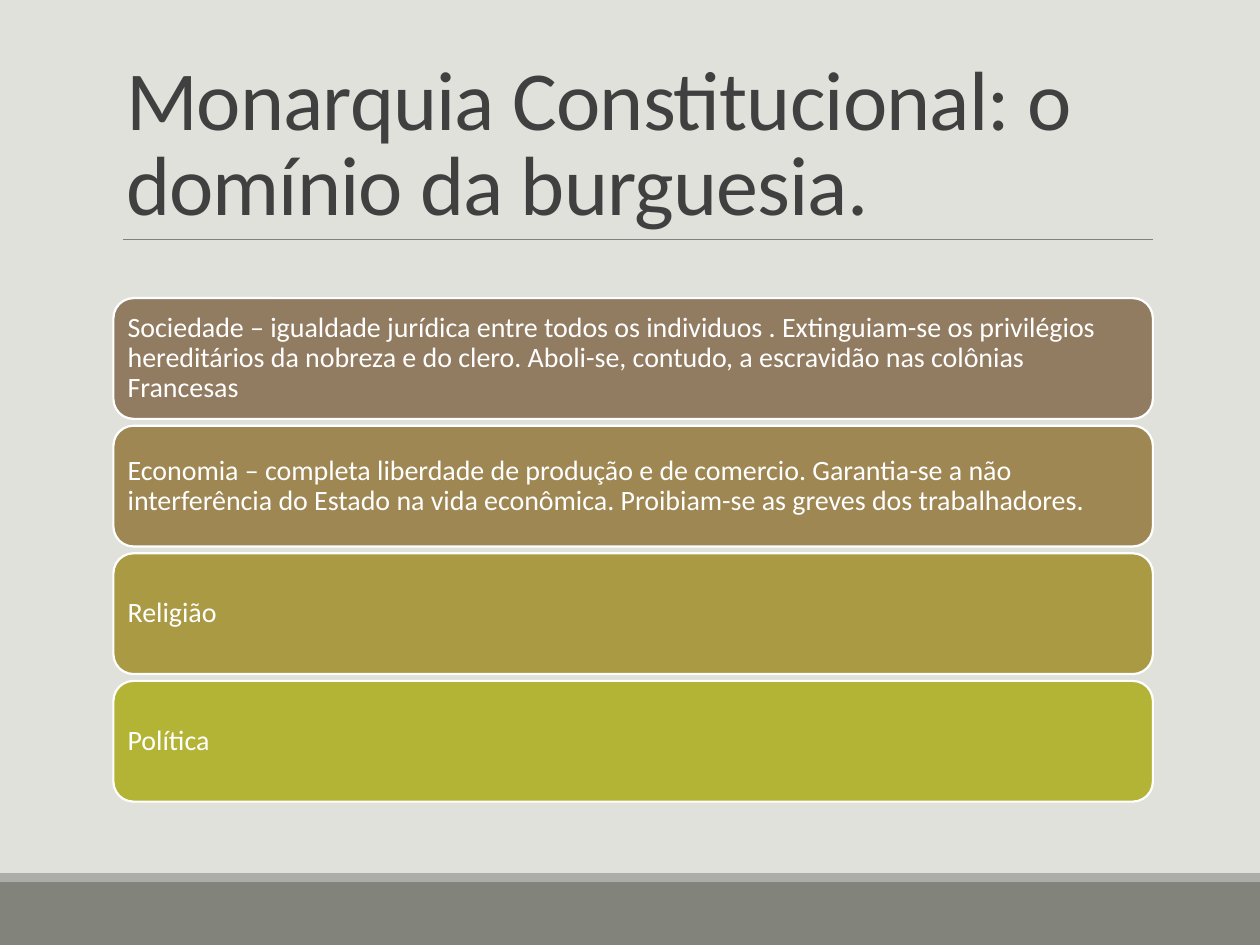
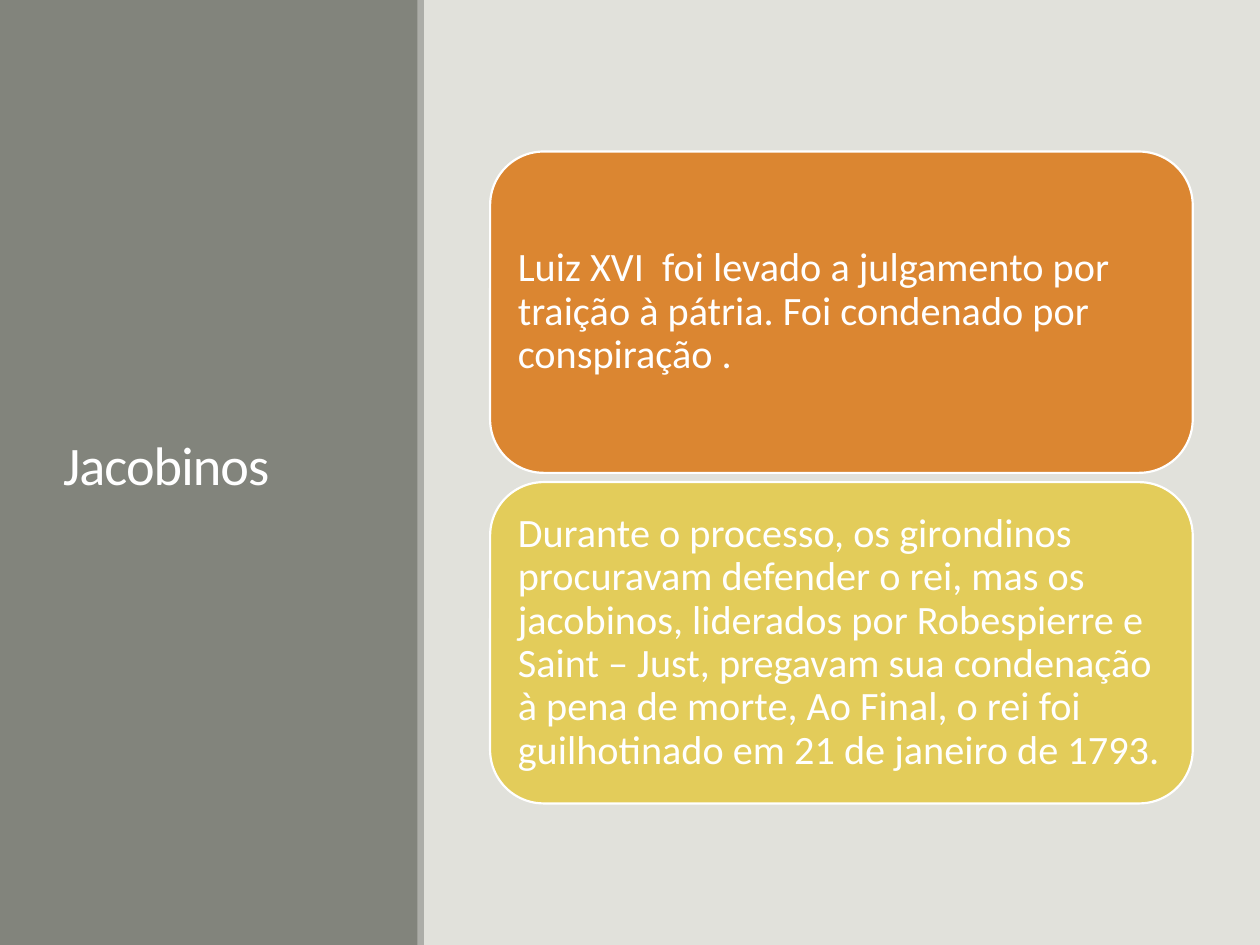
from dataclasses import dataclass

from lxml.etree import SubElement
from pptx import Presentation
from pptx.dml.color import RGBColor as RGB
from pptx.enum.shapes import MSO_CONNECTOR as Conn, MSO_SHAPE as Shape
from pptx.enum.text import MSO_ANCHOR as Anchor, MSO_AUTO_SIZE as AutoSize, PP_ALIGN as Align
from pptx.oxml.ns import qn
from pptx.util import Pt


@dataclass(frozen=True)
class Theme:
    """Colours, type sizes and page measures shared by the slides."""
    font: str = "Calibri"
    paper: str = "E1E1DB"
    band: str = "82847C"
    trim: str = "ACADA8"
    rule: str = "808080"
    ink: str = "404040"
    white: str = "FFFFFF"
    title_size: float = 48
    side_title_size: float = 31
    row_size: float = 16
    card_size: float = 23
    width: float = 720
    height: float = 540


T = Theme()

REFORMS = [
    ("927C61", "Sociedade – igualdade jurídica entre todos os individuos . Extinguiam-se os "
               "privilégios hereditários da nobreza e do clero. Aboli-se, contudo, a escravidão "
               "nas colônias Francesas"),
    ("9E8752", "Economia – completa liberdade de produção e de comercio. Garantia-se a não "
               "interferência do Estado na vida econômica. Proibiam-se as greves dos "
               "trabalhadores."),
    ("A99A43", "Religião"),
    ("B3B435", "Política"),
]

TRIAL = [
    ("DB8631", "Luiz XVI  foi levado a julgamento por traição à pátria. Foi condenado por "
               "conspiração ."),
    ("E3CC5A", "Durante o processo, os girondinos procuravam defender o rei, mas os jacobinos, "
               "liderados por Robespierre e Saint – Just, pregavam sua condenação à pena de "
               "morte, Ao Final, o rei foi guilhotinado em 21 de janeiro de 1793."),
]


def rgb(code):
    """Return the colour for a hex code."""
    return RGB.from_string(code)


def add_block(s, kind, box, fill, line=None):
    """Add a filled preset shape, outlined only when a line colour is given."""
    sp = s.shapes.add_shape(kind, *map(Pt, box))
    sp.shadow.inherit = False
    sp.fill.solid()
    sp.fill.fore_color.rgb = rgb(fill)
    if line:
        sp.line.color.rgb = rgb(line)
        sp.line.width = Pt(1.25)
    else:
        sp.line.fill.background()
    return sp


def write(tf, text, size, color, anchor, spacing):
    """Write one left-aligned paragraph and return its run."""
    tf.word_wrap = True
    tf.auto_size = AutoSize.NONE
    tf.vertical_anchor = anchor
    p = tf.paragraphs[0]
    p.alignment = Align.LEFT
    p.line_spacing = spacing
    r = p.add_run()
    r.text = text
    r.font.name = T.font
    r.font.size = Pt(size)
    r.font.color.rgb = rgb(color)
    return r


def set_title(s, text, box, size, color, anchor):
    """Place and format the title in front of the shapes drawn so far."""
    sp = s.shapes.title
    sp.left, sp.top, sp.width, sp.height = map(Pt, box)
    r = write(sp.text_frame, text, size, color, anchor, 0.85)
    r.font._element.set("spc", "-50")
    s.shapes.element.append(sp.element)


def add_rule(s, left, right, y):
    """Draw the thin horizontal line under the title."""
    c = s.shapes.add_connector(Conn.STRAIGHT, Pt(left), Pt(y), Pt(right), Pt(y))
    c.line.color.rgb = rgb(T.rule)
    c.line.width = Pt(0.5)
    SubElement(c.element.spPr, qn("a:effectLst"))


def add_bands(s, band, trim):
    """Draw the dark band and its light trim."""
    add_block(s, Shape.RECTANGLE, band, T.band)
    add_block(s, Shape.RECTANGLE, trim, T.trim)


def add_cards(s, cards, box, gap, size, inset):
    """Stack rounded cards downwards from the first card's box."""
    left, top, width, height = box
    for i, (fill, text) in enumerate(cards):
        y = top + i * (height + gap)
        sp = add_block(s, Shape.ROUNDED_RECTANGLE, (left, y, width, height), fill, T.white)
        tf = sp.text_frame
        tf.margin_left = tf.margin_right = tf.margin_top = tf.margin_bottom = Pt(inset)
        write(tf, text, size, T.white, Anchor.MIDDLE, 0.9)


def build_monarchy(s):
    """Build the slide on the constitutional monarchy."""
    add_bands(s, (0, 504, T.width, 36), (0, 499, T.width, 5))
    add_rule(s, 70.5, 659, 136.8)
    set_title(s, "Monarquia Constitucional: o domínio da burguesia.",
              (64.8, 22.3, 594, 114.5), T.title_size, T.ink, Anchor.BOTTOM)
    add_cards(s, REFORMS, (64.8, 170.4, 594, 69), 3.9, T.row_size, 4.8)


def build_jacobins(s):
    """Build the slide on the Jacobins."""
    add_bands(s, (0, 0, 239, T.height), (238.5, 0, 3.8, T.height))
    set_title(s, "Jacobinos", (28.8, 41, 182, 454.3),
              T.side_title_size, T.white, Anchor.MIDDLE)
    add_cards(s, TRIAL, (280.1, 86.6, 401.5, 183.6), 5.3, T.card_size, 6.9)


def main():
    """Build and save the presentation."""
    prs = Presentation()
    prs.slide_width, prs.slide_height = Pt(T.width), Pt(T.height)
    bg = prs.slide_master.background.fill
    bg.solid()
    bg.fore_color.rgb = rgb(T.paper)
    for build in (build_monarchy, build_jacobins):
        build(prs.slides.add_slide(prs.slide_layouts[5]))
    prs.save("out.pptx")


if __name__ == "__main__":
    main()
